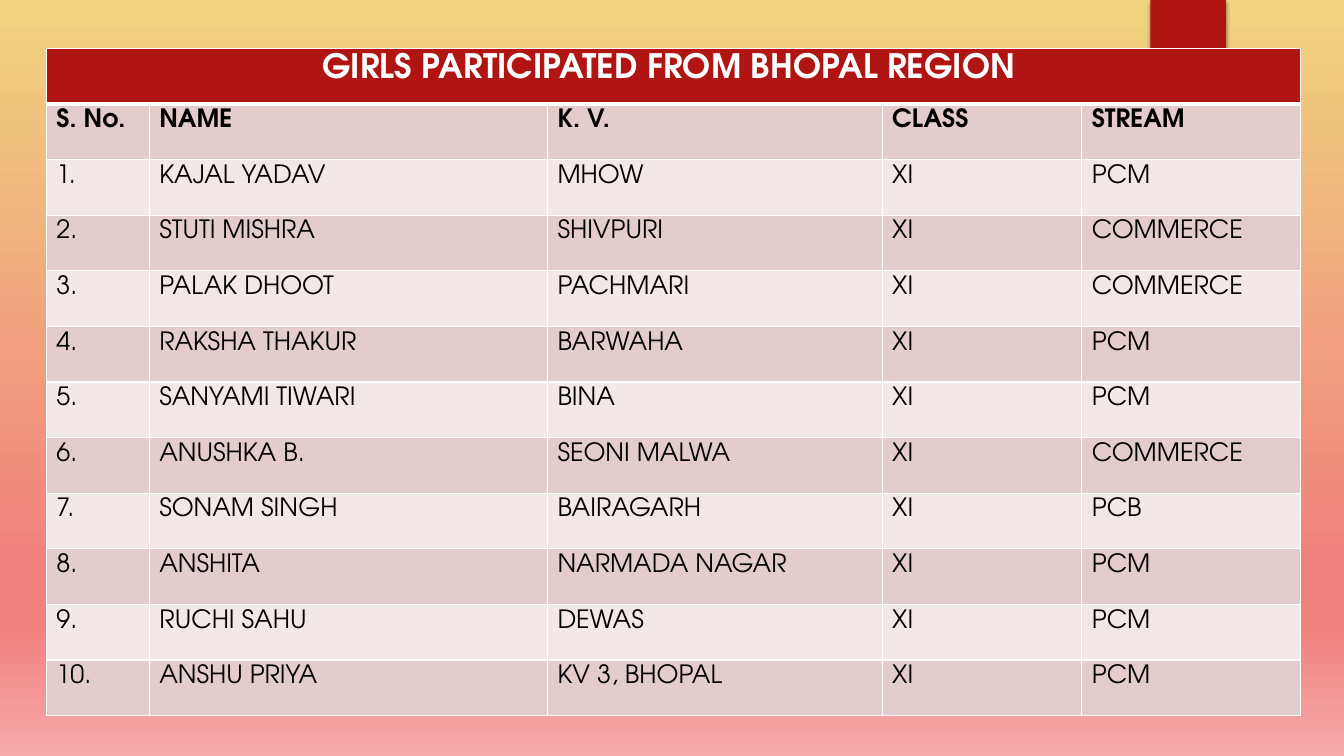
"""Build the slide listing the girls who participated from Bhopal region."""
import pptx
import pptx.util
import pptx.dml.color
import pptx.enum.shapes
import pptx.enum.text
import pptx.oxml
import pptx.oxml.ns

Inches, Pt = pptx.util.Inches, pptx.util.Pt
RGB = pptx.dml.color.RGBColor.from_string
qn = pptx.oxml.ns.qn
NS = pptx.oxml.ns.nsdecls("a")
FONT = "TeX Gyre Adventor"
COLORS = {"red": "B01513", "dark_band": "E4CCCC", "light_band": "F2E8E7",
          "white": "FFFFFF", "black": "000000"}
BACKGROUND = [(0, "F0D47F"), (74, "F1817F"), (83, "F1817F"), (100, "F6ABAA")]
WIDTHS = [1.02, 3.95, 3.32, 1.98, 2.17]
TITLE = "GIRLS PARTICIPATED FROM BHOPAL REGION "
HEADINGS = ["S. No.", "NAME", "K. V.", "CLASS", "STREAM"]
GIRLS = [
    ("KAJAL YADAV", "MHOW", "PCM"),
    ("STUTI MISHRA", "SHIVPURI", "COMMERCE"),
    ("PALAK DHOOT", "PACHMARI", "COMMERCE"),
    ("RAKSHA THAKUR", "BARWAHA", "PCM"),
    ("SANYAMI TIWARI", "BINA", "PCM"),
    ("ANUSHKA B.", "SEONI MALWA", "COMMERCE"),
    ("SONAM SINGH", "BAIRAGARH", "PCB"),
    ("ANSHITA", "NARMADA NAGAR", "PCM"),
    ("RUCHI SAHU", "DEWAS", "PCM"),
    ("ANSHU PRIYA", "KV 3, BHOPAL", "PCM"),
]

prs = pptx.Presentation()
prs.slide_width, prs.slide_height = Inches(13.33), Inches(7.5)
s = prs.slides.add_slide(prs.slide_layouts[6])

fill = s.background.fill
fill.gradient()
fill.gradient_angle = 270
stops = next(s.element.iter(qn("a:gsLst")))
for stop in list(stops):
    stops.remove(stop)
for pos, color in BACKGROUND:
    stops.append(pptx.oxml.parse_xml(
        f'<a:gs {NS} pos="{pos * 1000}"><a:srgbClr val="{color}"/></a:gs>'))

ribbon = s.shapes.add_shape(pptx.enum.shapes.MSO_SHAPE.RECTANGLE,
                            Inches(11.41), 0, Inches(0.75), Inches(1.25))
ribbon.fill.solid()
ribbon.fill.fore_color.rgb = RGB(COLORS["red"])
ribbon.line.fill.background()
ribbon.shadow.inherit = False
ribbon.element.spPr.find(qn("a:effectLst")).append(pptx.oxml.parse_xml(
    f'<a:outerShdw {NS} blurRad="{Pt(3)}" dist="{Pt(2)}" dir="5400000" rotWithShape="0">'
    f'<a:srgbClr val="{COLORS["black"]}"><a:alpha val="45000"/></a:srgbClr></a:outerShdw>'))

rows = [[TITLE, "", "", "", ""], HEADINGS]
for number, (name, school, stream) in enumerate(GIRLS, 1):
    rows.append([f"{number}.", name, school, "XI", stream])

table = s.shapes.add_table(len(rows), len(WIDTHS), Inches(0.46), Inches(0.48),
                           Inches(12.43), Inches(6.62)).table
for column, width in zip(table.columns, WIDTHS):
    column.width = Inches(width)
for row in table.rows:
    row.height = Inches(6.62 / len(rows))
table.cell(0, 0).merge(table.cell(0, len(WIDTHS) - 1))

for i, texts in enumerate(rows):
    band = "red" if i == 0 else "dark_band" if i % 2 else "light_band"
    for j, text in enumerate(texts):
        cell = table.cell(i, j)
        cell.fill.solid()
        cell.fill.fore_color.rgb = RGB(COLORS[band])
        tcPr = cell._tc.get_or_add_tcPr()
        for k, side in enumerate("LRTB"):
            thick = (i, side) in [(0, "B"), (1, "T")]
            tcPr.insert(k, pptx.oxml.parse_xml(
                f'<a:ln{side} {NS} w="{Pt(3 if thick else 1)}"><a:solidFill>'
                f'<a:srgbClr val="{COLORS["white"]}"/></a:solidFill></a:ln{side}>'))
        if not text:
            continue
        p = cell.text_frame.paragraphs[0]
        p.text = text
        if i == 0:
            p.alignment = pptx.enum.text.PP_ALIGN.CENTER
        font = p.runs[0].font
        font.name = FONT
        font.size = Pt(24 if i == 0 else 18)
        font.bold = i < 2
        font.color.rgb = RGB(COLORS["white" if i == 0 else "black"])

prs.save("out.pptx")
